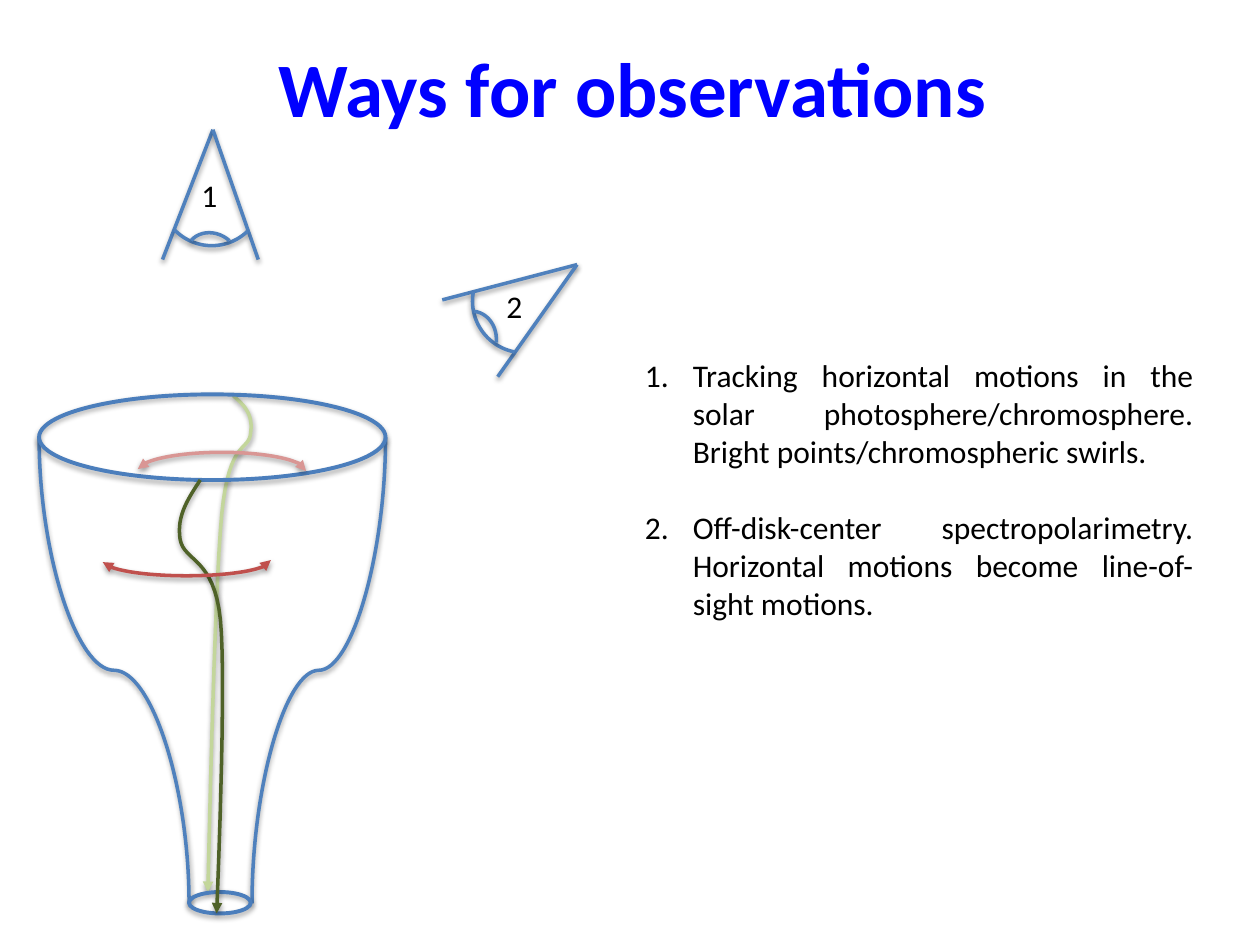
import pptx
import pptx.util
import pptx.dml.color
import pptx.enum.shapes
import pptx.enum.text
import pptx.oxml
import pptx.oxml.ns

Inches = pptx.util.Inches
Pt = pptx.util.Pt
SHAPE = pptx.enum.shapes.MSO_SHAPE
CONNECTOR = pptx.enum.shapes.MSO_CONNECTOR
ALIGN = pptx.enum.text.PP_ALIGN
ANCHOR = pptx.enum.text.MSO_ANCHOR

BLUE = "4F81BD"
RIM_BLUE = "4B7EBC"
BODY_FONT = {"name": "Calibri", "size": Pt(18), "bold": False}
TITLE_FONT = {"name": "Calibri", "size": Pt(44), "bold": True}


def rgb(value):
    return pptx.dml.color.RGBColor.from_string(value)


def xml(tag, attrs="", inner=""):
    ns = pptx.oxml.ns.nsdecls("a")
    return pptx.oxml.parse_xml(f"<a:{tag} {ns} {attrs}>{inner}</a:{tag}>")


def style_line(sp, color, width=2, head=False, tail=False, alpha=38):
    sp.line.color.rgb = rgb(color)
    sp.line.width = Pt(width)
    ln = sp.line._get_or_add_ln()
    for tag, shown in (("headEnd", head), ("tailEnd", tail)):
        if shown:
            ln.append(xml(tag, 'type="triangle"'))
    sp._element.spPr.append(xml("effectLst", "", (
        f'<a:outerShdw blurRad="{Pt(3.1)}" dist="{Pt(1.6)}" dir="5400000" rotWithShape="0">'
        f'<a:srgbClr val="000000"><a:alpha val="{alpha * 1000}"/></a:srgbClr></a:outerShdw>')))


def add_outline(shapes, kind, box, color, rotation=0, start=None, flip=False, **line):
    sp = shapes.add_shape(kind, *map(Inches, box))
    sp.shadow.inherit = False
    sp._element.spPr.remove(sp._element.spPr.find(pptx.oxml.ns.qn("a:effectLst")))
    sp.fill.background()
    sp.rotation = rotation
    if start is not None:
        sp.adjustments[0] = start
        sp.adjustments[1] = 0
    if flip:
        sp._element.spPr.xfrm.set("flipV", "1")
    style_line(sp, color, **line)


def add_line(shapes, begin, end):
    cx = shapes.add_connector(CONNECTOR.STRAIGHT, *map(Inches, begin + end))
    style_line(cx, BLUE)


def add_wall(shapes, top, bottom, rotation):
    width, height = bottom[1] - top[1], abs(bottom[0] - top[0])
    x = (top[0] + bottom[0] - width) / 2
    y = (top[1] + bottom[1] - height) / 2
    ends = (x, y, x + width, y + height)
    if rotation == 270:
        ends = (x + width, y, x, y + height)
    cx = shapes.add_connector(CONNECTOR.CURVE, *map(Inches, ends))
    cx._element.spPr.xfrm.set("rot", str(rotation * 60000))
    style_line(cx, BLUE)


def bezier(p0, p1, p2, p3, steps=16):
    for i in range(1, steps + 1):
        t = i / steps
        u = 1 - t
        yield tuple(u**3 * a + 3 * u * u * t * b + 3 * u * t * t * c + t**3 * d
                    for a, b, c, d in zip(p0, p1, p2, p3))


def add_field_line(shapes, points, color):
    curve = [q for i in range(0, len(points) - 1, 3) for q in bezier(*points[i:i + 4])]
    builder = shapes.build_freeform(*map(Inches, points[0]))
    builder.add_line_segments([(Inches(x), Inches(y)) for x, y in curve], close=False)
    sp = builder.convert_to_shape()
    sp.fill.background()
    style_line(sp, color, tail=True)


def add_eye(shapes, ends, apex, iris, pupil):
    group = shapes.add_group_shape().shapes
    for end in ends:
        add_line(group, end, apex)
    for box, rotation in (iris, pupil):
        add_outline(group, SHAPE.ARC, box, BLUE, rotation)


def add_text(shapes, box, texts, font=BODY_FONT, color="000000", align=ALIGN.LEFT,
             anchor=ANCHOR.TOP, numbered=False, gap=0):
    tf = shapes.add_textbox(*map(Inches, box)).text_frame
    tf.word_wrap = True
    tf.vertical_anchor = anchor
    for i, text in enumerate(texts):
        p = tf.add_paragraph() if i else tf.paragraphs[0]
        p.alignment = align
        if i:
            p.space_before = Pt(gap)
        if numbered:
            pPr = p._p.get_or_add_pPr()
            pPr.set("marL", str(Inches(0.38)))
            pPr.set("indent", str(Inches(-0.38)))
            pPr.append(xml("buFont", 'typeface="+mj-lt"'))
            pPr.append(xml("buAutoNum", 'type="arabicPeriod"'))
        r = p.add_run()
        r.text = text
        r.font.color.rgb = rgb(color)
        for name, value in font.items():
            setattr(r.font, name, value)


def add_flux_tube(shapes):
    add_field_line(shapes, [(1.85, 3.14), (1.93, 3.21), (2.01, 3.28), (1.99, 3.43),
                            (1.98, 3.59), (1.82, 3.47), (1.76, 4.08),
                            (1.7, 4.69), (1.65, 7.08), (1.65, 7.08)], "C3D69B")
    add_wall(shapes, (0.31, 3.47), (1.5, 7.17), 270)
    add_wall(shapes, (3.06, 3.47), (2, 7.17), 90)
    for box in ((0.31, 3.13, 2.75, 0.68), (1.5, 7.08, 0.49, 0.17)):
        add_outline(shapes, SHAPE.OVAL, box, RIM_BLUE, width=2.25, alpha=35)
    add_field_line(shapes, [(1.59, 3.81), (1.5, 3.95), (1.4, 4.09), (1.43, 4.28),
                            (1.46, 4.46), (1.7, 4.42), (1.75, 4.92),
                            (1.8, 5.41), (1.72, 7.25), (1.72, 7.25)], "4F6228")
    for box, color, flip in (((0.81, 4.32, 1.34, 0.25), "C0504D", True),
                             ((1.09, 3.59, 1.34, 0.3), "D99694", False)):
        add_outline(shapes, SHAPE.ARC, box, color, start=108.865, flip=flip,
                    head=True, tail=True)


def main():
    prs = pptx.Presentation()
    prs.slide_width, prs.slide_height = Inches(10), Inches(7.5)
    s = prs.slides.add_slide(prs.slide_layouts[6])
    shapes = s.shapes

    add_text(shapes, (0.52, 0.06, 9, 1.25), ["Ways for observations"], TITLE_FONT,
             "0000FF", ALIGN.CENTER, ANCHOR.MIDDLE)
    add_flux_tube(shapes)
    add_eye(shapes, [(3.51, 2.38), (3.95, 2.99)], (4.58, 2.1),
            ((3.75, 1.98, 0.82, 0.82), 190.7), ((3.54, 2.47, 0.4, 0.46), 5.5))
    add_eye(shapes, [(1.29, 2.06), (2.05, 2.06)], (1.69, 1.03),
            ((1.27, 1.13, 0.82, 0.82), 136.3), ((1.49, 1.83, 0.4, 0.46), 311.2))
    add_text(shapes, (1.5, 1.35, 0.49, 0.42), ["1"])
    add_text(shapes, (3.92, 2.23, 0.28, 0.4), ["2"])
    add_text(shapes, (5.02, 2.78, 4.55, 2.22), [
        "Tracking horizontal motions in the solar photosphere/chromosphere. "
        "Bright points/chromospheric swirls.",
        "Off-disk-center spectropolarimetry. "
        "Horizontal motions become line-of-sight motions.",
    ], align=ALIGN.JUSTIFY, numbered=True, gap=22)
    prs.save("out.pptx")


if __name__ == "__main__":
    main()
